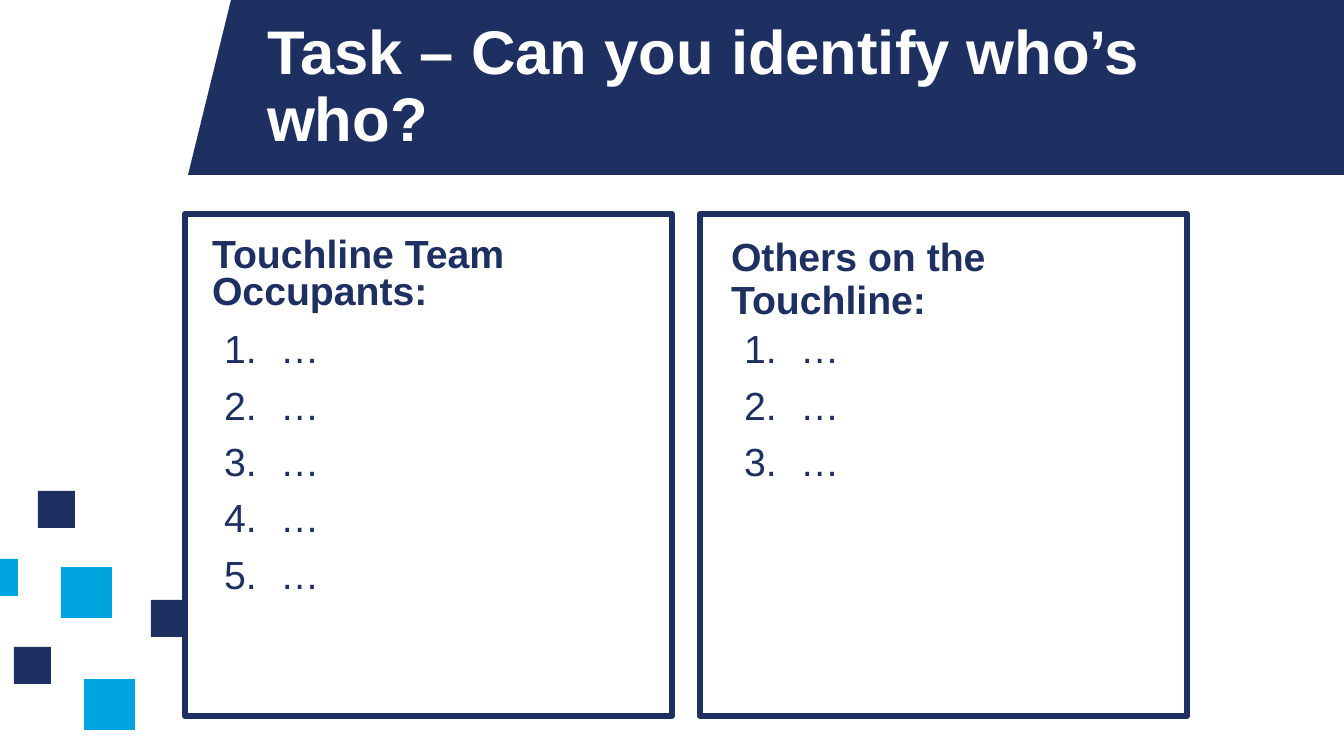
from lxml import etree
from pptx import Presentation
from pptx import util as u
from pptx.dml.color import RGBColor
from pptx.enum import shapes, text
from pptx.oxml import ns

PX = 914400 / 100.8
NAVY = RGBColor(0x1E, 0x30, 0x62)
CYAN = RGBColor(0x00, 0xA5, 0xDF)
WHITE = RGBColor(0xFF, 0xFF, 0xFF)

SMALL, LARGE = 37, 51
SQUARES = [
    (14, 647, SMALL, NAVY),
    (84, 679, LARGE, CYAN),
    (61, 567, LARGE, CYAN),
    (151, 600, SMALL, NAVY),
    (38, 491, SMALL, NAVY),
]
ELLIPSIS = "…"


def px(length):
    return u.Emu(round(length * PX))


def paint(shape, fill, line=None, line_width=4.5):
    shape.shadow.inherit = False
    shape.fill.solid()
    shape.fill.fore_color.rgb = fill
    if line is None:
        shape.line.fill.background()
    else:
        shape.line.color.rgb = line
        shape.line.width = u.Pt(line_width)


def add_box(slide, left, top, width, height, fill, line=None):
    box = slide.shapes.add_shape(
        shapes.MSO_SHAPE.RECTANGLE, px(left), px(top), px(width), px(height))
    paint(box, fill, line)


def add_banner(slide):
    builder = slide.shapes.build_freeform(231, 0, scale=PX)
    builder.add_line_segments([(1344, 0), (1344, 175), (188, 175)])
    paint(builder.convert_to_shape(), NAVY)


def number_paragraph(paragraph, indent):
    properties = paragraph._p.get_or_add_pPr()
    properties.set("marL", str(px(indent)))
    properties.set("indent", str(-px(indent)))
    etree.SubElement(properties, ns.qn("a:buAutoNum"), type="arabicPeriod")


def write(placeholder, lines, left, top, width, height, size=28, bold=False,
          color=NAVY, spacing=0.9, anchor=text.MSO_ANCHOR.TOP, numbered=False):
    """Move a placeholder to the front of the slide and fill it with lines."""
    placeholder._element.getparent().append(placeholder._element)
    placeholder.left, placeholder.top = px(left), px(top)
    placeholder.width, placeholder.height = px(width), px(height)
    frame = placeholder.text_frame
    frame.word_wrap = True
    frame.auto_size = text.MSO_AUTO_SIZE.NONE
    frame.vertical_anchor = anchor
    for index, line in enumerate(lines):
        paragraph = frame.add_paragraph() if index else frame.paragraphs[0]
        if numbered:
            number_paragraph(paragraph, indent=56)
        paragraph.alignment = text.PP_ALIGN.LEFT
        paragraph.line_spacing = spacing
        paragraph.space_before = u.Pt(10 if index else 0)
        run = paragraph.add_run()
        run.text = line
        run.font.name = "Arial"
        run.font.size = u.Pt(size)
        run.font.bold = bold
        run.font.color.rgb = color


def main():
    presentation = Presentation()
    presentation.slide_width, presentation.slide_height = px(1344), px(756)
    comparison_layout = presentation.slide_layouts[4]
    slide = presentation.slides.add_slide(comparison_layout)
    title, left_heading, left_list, right_heading, right_list = slide.placeholders

    add_banner(slide)
    for left, top, side, color in SQUARES:
        add_box(slide, left, top, side, side, color)
    add_box(slide, 0, 559, 18, SMALL, CYAN)
    for left in (185, 700):
        add_box(slide, left, 214, 487, 502, WHITE, line=NAVY)

    write(title, ["Task – Can you identify who’s who?"], 257, 15, 995, 146,
          size=44, bold=True, color=WHITE, anchor=text.MSO_ANCHOR.MIDDLE)
    write(left_heading, ["Touchline Team Occupants:"], 202, 233, 349, 91,
          bold=True, spacing=0.8)
    write(left_list, [ELLIPSIS] * 5, 214, 325, 569, 406, numbered=True)
    write(right_heading, ["Others on the Touchline:"], 721, 233, 438, 91,
          bold=True)
    write(right_list, [ELLIPSIS] * 3, 734, 325, 572, 406, numbered=True)

    presentation.save("out.pptx")


if __name__ == "__main__":
    main()
